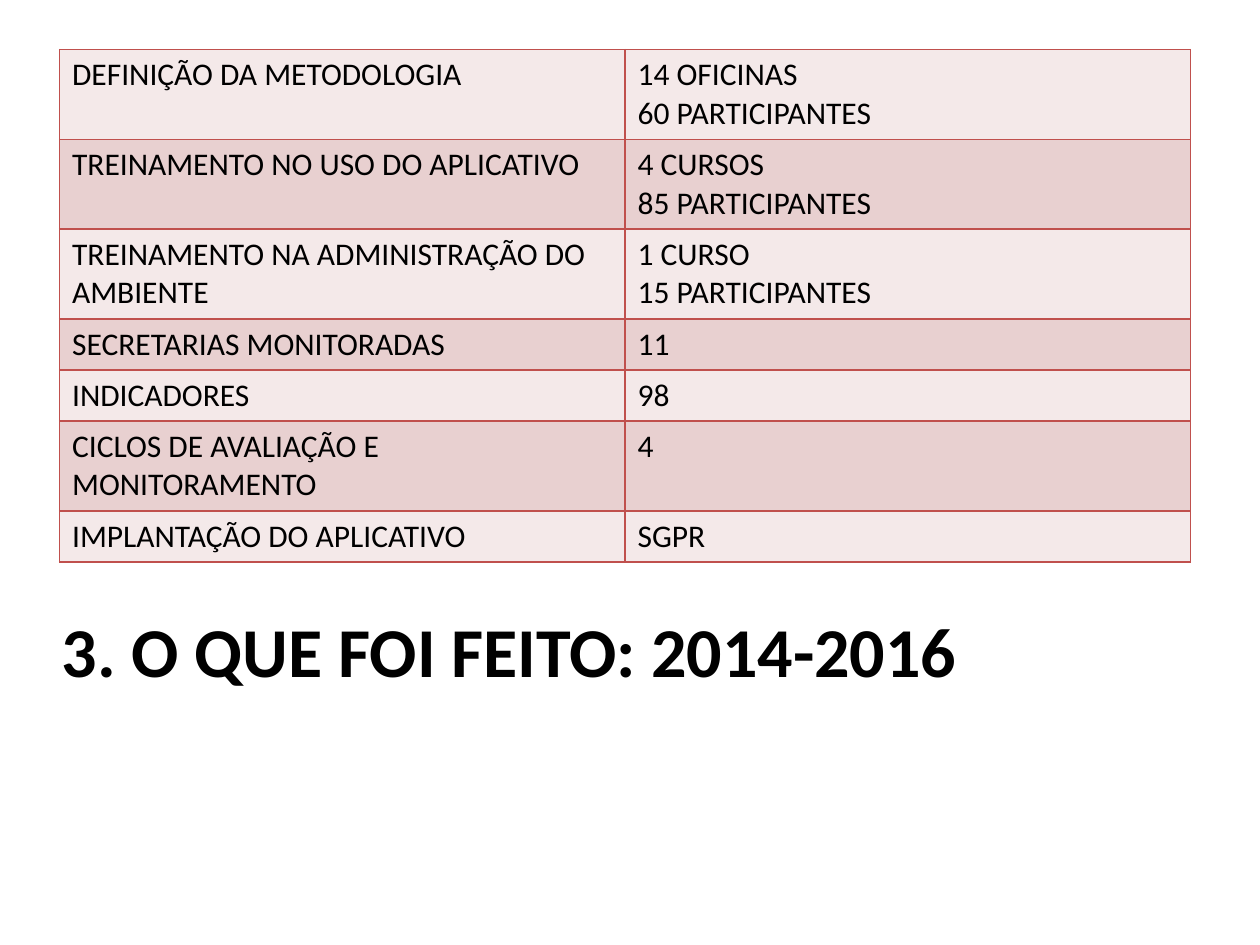
from lxml import etree
from pptx import Presentation
from pptx.dml.color import RGBColor
from pptx.enum import text
from pptx.oxml.ns import qn
from pptx.util import Cm, Pt

FONT = "Calibri"
BLACK = "000000"
BORDER = "C0504D"
BANDS = ("F4E9E9", "E8D0D0")
LINE_HEIGHT = 0.78
ROW_PADDING = 0.25

# Activity, results, lines of text that the row holds
ACTIVITIES = [
    ("DEFINIÇÃO DA METODOLOGIA", ["14 OFICINAS", "60 PARTICIPANTES"], 2),
    ("TREINAMENTO NO USO DO APLICATIVO", ["4 CURSOS", "85 PARTICIPANTES"], 2),
    ("TREINAMENTO NA ADMINISTRAÇÃO DO AMBIENTE", ["1 CURSO", "15 PARTICIPANTES"], 2),
    ("SECRETARIAS MONITORADAS", ["11"], 1),
    ("INDICADORES", ["98"], 1),
    ("CICLOS DE AVALIAÇÃO E MONITORAMENTO", ["4"], 2),
    ("IMPLANTAÇÃO DO APLICATIVO", ["SGPR"], 1),
]


def color(hex_value):
    return RGBColor.from_string(hex_value)


def write_lines(frame, lines, size, bold=False):
    frame.word_wrap = True
    for i, line in enumerate(lines):
        paragraph = frame.paragraphs[0] if i == 0 else frame.add_paragraph()
        run = paragraph.add_run()
        run.text = line
        run.font.name = FONT
        run.font.size = Pt(size)
        run.font.bold = bold
        run.font.color.rgb = color(BLACK)


def add_borders(cell):
    """Outline all four sides; border lines must precede the fill in tcPr."""
    properties = cell._tc.get_or_add_tcPr()
    for i, side in enumerate(("lnL", "lnR", "lnT", "lnB")):
        line = etree.Element(qn(f"a:{side}"), w=str(Pt(1)))
        fill = etree.SubElement(line, qn("a:solidFill"))
        etree.SubElement(fill, qn("a:srgbClr"), val=BORDER)
        properties.insert(i, line)


def add_results_table(slide, left, top, width):
    heights = [Cm(ROW_PADDING + LINE_HEIGHT * count) for *_, count in ACTIVITIES]
    table = slide.shapes.add_table(
        len(ACTIVITIES), 2, left, top, width, sum(heights)).table
    table.first_row = False
    table.horz_banding = False
    for i, (activity, results, _) in enumerate(ACTIVITIES):
        table.rows[i].height = heights[i]
        for cell, lines in zip(table.rows[i].cells, ([activity], results)):
            cell.fill.solid()
            cell.fill.fore_color.rgb = color(BANDS[i % 2])
            add_borders(cell)
            write_lines(cell.text_frame, lines, 18)


def add_title(slide, left, top, width, height):
    title = slide.shapes.add_textbox(left, top, width, height)
    title.text_frame.vertical_anchor = text.MSO_ANCHOR.TOP
    write_lines(title.text_frame, ["3. O QUE FOI FEITO: 2014-2016"], 40, bold=True)


def main():
    deck = Presentation()
    deck.slide_width, deck.slide_height = Cm(25.4), Cm(19.05)
    slide = deck.slides.add_slide(deck.slide_layouts[6])
    add_title(slide, Cm(1), Cm(12.12), Cm(21.6), Cm(3.78))
    add_results_table(slide, Cm(1.2), Cm(1), Cm(22.8))
    deck.save("out.pptx")


if __name__ == "__main__":
    main()
